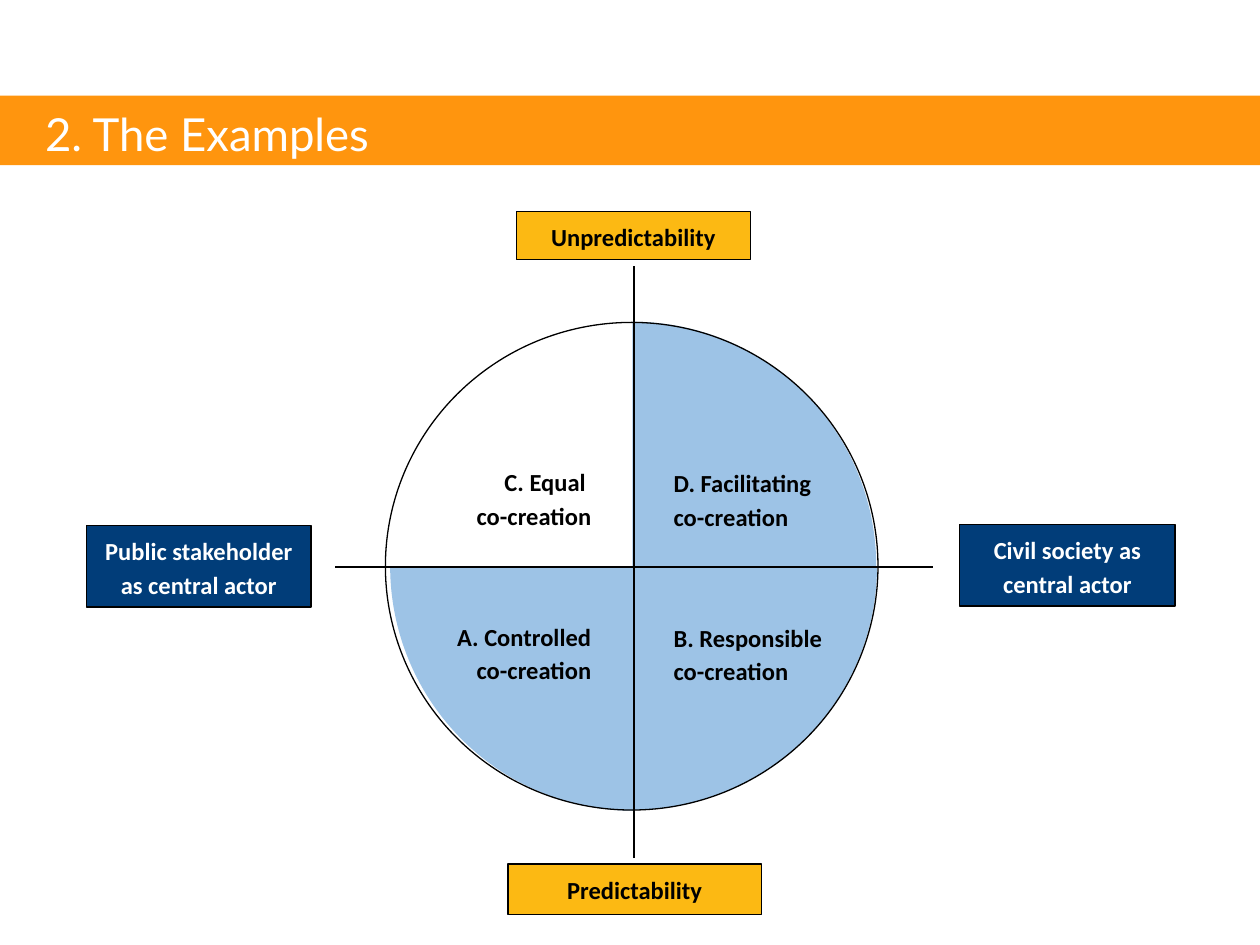
"""Build the co-creation quadrant slide."""
from lxml import etree
from pptx import Presentation
from pptx.dml.color import RGBColor
from pptx.enum import shapes, text
from pptx.oxml import ns
from pptx.util import Cm, Pt

COLORS = {
    "orange": "FF950E", "quadrant": "9DC3E6", "navy": "013D79",
    "amber": "FCB913", "black": "000000", "white": "FFFFFF",
}
LEFT, CENTER, RIGHT = text.PP_ALIGN.LEFT, text.PP_ALIGN.CENTER, text.PP_ALIGN.RIGHT


def write(frame, content, size=14, font="Calibri", color="black", bold=True,
          align=LEFT, spacing=1.15, anchor=text.MSO_ANCHOR.TOP):
    frame.word_wrap = True
    frame.vertical_anchor = anchor
    frame.text = content
    for paragraph in frame.paragraphs:
        paragraph.alignment = align
        paragraph.line_spacing = spacing
        paragraph.font.size = Pt(size)
        paragraph.font.name = font
        paragraph.font.bold = bold
        paragraph.font.color.rgb = RGBColor.from_string(COLORS[color])


def add_area(kind, box, fill=None, outlined=False):
    area = slide.shapes.add_shape(kind, *map(Cm, box))
    area.shadow.inherit = False
    if fill:
        area.fill.solid()
        area.fill.fore_color.rgb = RGBColor.from_string(COLORS[fill])
    else:
        area.fill.background()
    if outlined:
        area.line.color.rgb = RGBColor.from_string(COLORS["black"])
        area.line.width = Pt(0.75)
    else:
        area.line.fill.background()
    return area


prs = Presentation()
prs.slide_width, prs.slide_height = Cm(25.4), Cm(19.05)
slide = prs.slides.add_slide(prs.slide_layouts[6])

add_area(shapes.MSO_SHAPE.RECTANGLE, (0, 1.93, 25.4, 1.4), "orange")

for rotation, left in ((90, 7.85), (270, 7.82), (0, 7.82)):
    quadrant = add_area(shapes.MSO_SHAPE.PIE, (left, 6.5, 9.86, 9.83), "quadrant")
    quadrant.adjustments[0] = 0
    quadrant.adjustments[1] = 54
    quadrant.rotation = rotation

title = slide.shapes.add_textbox(Cm(0.66), Cm(1.98), Cm(23.44), Cm(1.4))
write(title.text_frame, "2. The Examples", size=26, font="Lato", color="white",
      bold=False, spacing=1, anchor=text.MSO_ANCHOR.MIDDLE)

for name, left, top, width, align in (
    ("C. Equal ", 8.28, 9.2, 3.89, RIGHT),
    ("A. Controlled", 8.28, 12.32, 3.89, RIGHT),
    ("B. Responsible", 13.33, 12.34, 4.29, LEFT),
    ("D. Facilitating", 13.33, 9.22, 4.29, LEFT),
):
    label = slide.shapes.add_textbox(Cm(left), Cm(top), Cm(width), Cm(1.8))
    write(label.text_frame, f"{name}\nco-creation", align=align)

add_area(shapes.MSO_SHAPE.OVAL, (7.77, 6.5, 9.93, 9.83), outlined=True)

for wording, box, fill, color in (
    ("Civil society as central actor", (19.35, 10.57, 4.34, 1.65), "navy", "white"),
    ("Unpredictability", (10.41, 4.27, 4.72, 0.97), "amber", "black"),
    ("Predictability", (10.24, 17.42, 5.11, 1.02), "amber", "black"),
    ("Public stakeholder as central actor", (1.75, 10.59, 4.52, 1.65), "navy", "white"),
):
    pole = add_area(shapes.MSO_SHAPE.RECTANGLE, box, fill, outlined=True)
    write(pole.text_frame, wording, color=color, align=CENTER)

for ends in ((6.76, 11.43, 18.8, 11.43), (12.78, 17.3, 12.78, 5.36)):
    axis = slide.shapes.add_connector(shapes.MSO_CONNECTOR.STRAIGHT, *map(Cm, ends))
    axis.line.color.rgb = RGBColor.from_string(COLORS["black"])
    axis.line.width = Pt(0.75)
    etree.SubElement(axis._element.spPr, ns.qn("a:effectLst"))

prs.save("out.pptx")
